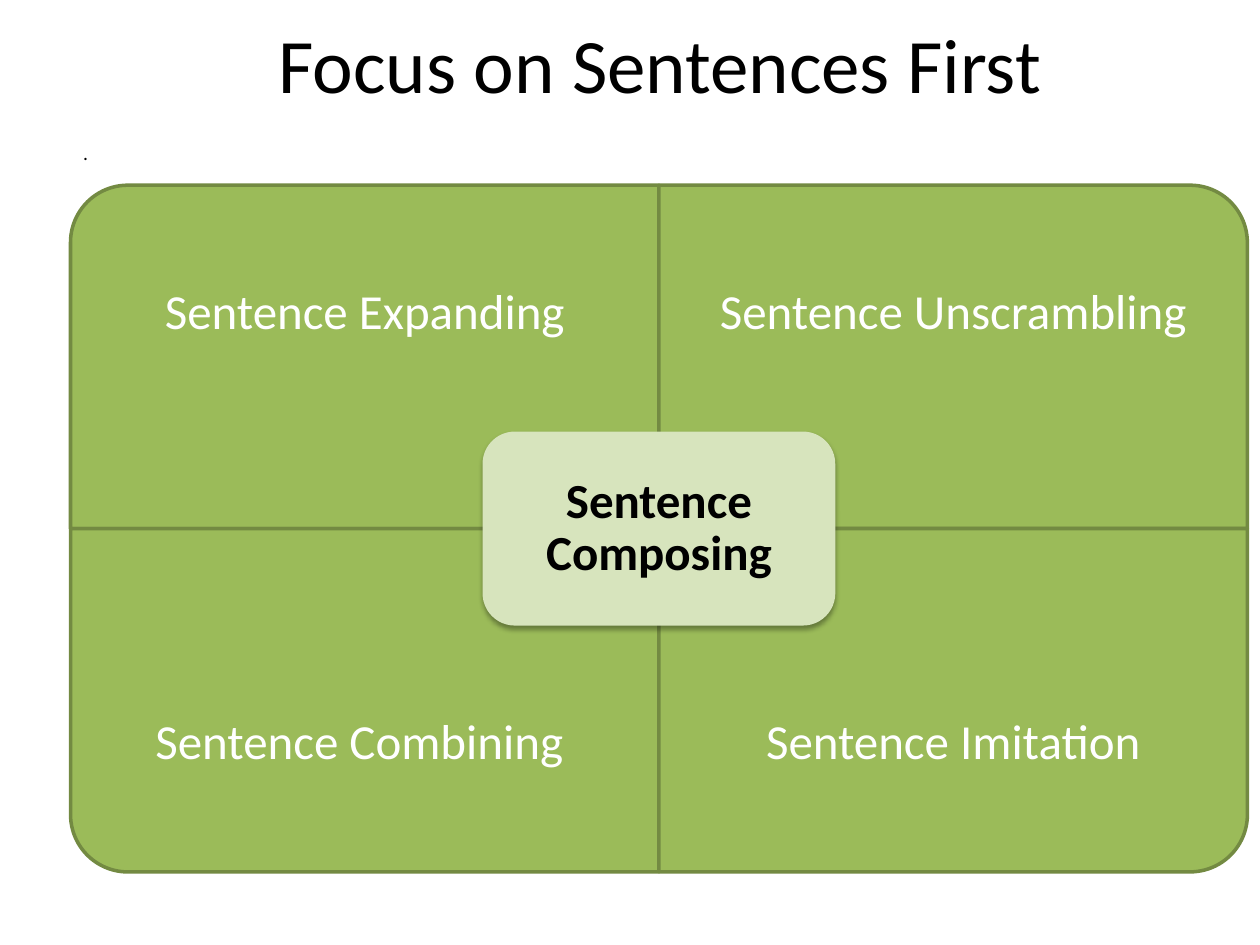
from lxml import etree
from pptx import Presentation
from pptx import util as u
from pptx.dml.color import RGBColor
from pptx.enum import shapes, text
from pptx.oxml import ns

Inches, Pt = u.Inches, u.Pt
GREEN, EDGE, PALE = "9BBB59", "738A42", "D7E4BD"
WHITE, BLACK = "FFFFFF", "000000"


def colour(code):
    return RGBColor.from_string(code)


def place(shape, left, top, width, height):
    shape.left, shape.top = Inches(left), Inches(top)
    shape.width, shape.height = Inches(width), Inches(height)


def format_para(para, size, code, bold=False):
    para.font.name = "Calibri"
    para.font.size = Pt(size)
    para.font.bold = bold
    para.font.color.rgb = colour(code)


def fill_placeholder(shape, words, size, align, box):
    place(shape, *box)
    frame = shape.text_frame
    frame.text = words
    frame.auto_size = text.MSO_AUTO_SIZE.NONE
    frame.vertical_anchor = text.MSO_ANCHOR.TOP
    para = frame.paragraphs[0]
    para.alignment = align
    format_para(para, size, BLACK)
    return para


def remove_bullet(para):
    properties = para._p.get_or_add_pPr()
    properties.set("marL", "0")
    properties.set("indent", "0")
    etree.SubElement(properties, ns.qn("a:buNone"))


def add_label(group, words, box, inset, code, bold=False):
    label = group.shapes.add_textbox(*(Inches(length) for length in box))
    frame = label.text_frame
    frame.word_wrap = True
    frame.vertical_anchor = text.MSO_ANCHOR.MIDDLE
    frame.margin_left = frame.margin_right = Inches(inset)
    frame.margin_top = frame.margin_bottom = Inches(inset)
    frame.text = words
    para = frame.paragraphs[0]
    para.alignment = text.PP_ALIGN.CENTER
    para.line_spacing = 0.9
    para.space_after = Pt(9.8)
    format_para(para, 28, code, bold)


def add_panel(group, kind, box, fill):
    panel = group.shapes.add_shape(kind, *(Inches(length) for length in box))
    panel.shadow.inherit = False
    panel.fill.solid()
    panel.fill.fore_color.rgb = colour(fill)
    return panel


def add_soft_shadow(shape):
    effects = shape._element.spPr.find(ns.qn("a:effectLst"))
    shadow = etree.SubElement(
        effects, ns.qn("a:outerShdw"), blurRad=str(Pt(3.1)), dist=str(Pt(1.8)),
        dir="5400000", algn="t", rotWithShape="0")
    shade = etree.SubElement(shadow, ns.qn("a:srgbClr"), val=BLACK)
    etree.SubElement(shade, ns.qn("a:alpha"), val="35000")


def add_quadrant(group, words, box, rotation, is_lower):
    """Panel turned so its round corner points outward, label in its outer 3/4."""
    left, top, width, height = box
    sides = (height, width) if rotation % 180 else (width, height)
    turned = (left + (width - sides[0]) / 2, top + (height - sides[1]) / 2, *sides)
    panel = add_panel(group, shapes.MSO_SHAPE.ROUND_1_RECTANGLE, turned, GREEN)
    panel.rotation = rotation
    panel.line.color.rgb = colour(EDGE)
    panel.line.width = Pt(2)
    label_top = top + height / 4 if is_lower else top
    add_label(group, words, (left, label_top, width, height * 3 / 4), 0.22, WHITE)


def add_centre(group, words, box):
    left, top, width, height = box
    panel = add_panel(group, shapes.MSO_SHAPE.ROUNDED_RECTANGLE, box, PALE)
    panel.line.fill.background()
    add_soft_shadow(panel)
    pad = 0.08
    inner = (left + pad, top + pad, width - 2 * pad, height - 2 * pad)
    add_label(group, words, inner, 0.12, BLACK, bold=True)


def add_matrix(page, box):
    left, top, width, height = box
    half_width, half_height = width / 2, height / 2
    group = page.shapes.add_group_shape()
    quadrants = [
        ("Sentence Expanding", 0, 0, 270),
        ("Sentence Unscrambling", 1, 0, 0),
        ("Sentence Combining ", 0, 1, 180),
        ("Sentence Imitation", 1, 1, 90),
    ]
    for words, column, row, rotation in quadrants:
        cell = (left + column * half_width, top + row * half_height,
                half_width, half_height)
        add_quadrant(group, words, cell, rotation, row == 1)
    centre_width, centre_height = 2.8, 1.54
    add_centre(group, "Sentence Composing",
               (left + (width - centre_width) / 2, top + (height - centre_height) / 2,
                centre_width, centre_height))


def main():
    deck = Presentation()
    deck.slide_width, deck.slide_height = Inches(10), Inches(7.5)
    page = deck.slides.add_slide(deck.slide_layouts[1])
    fill_placeholder(page.shapes.title, "Focus on Sentences First", 44,
                     text.PP_ALIGN.CENTER, (1.14, 0.08, 8.2, 1.25))
    body = fill_placeholder(page.placeholders[1], ".", 11.2,
                            text.PP_ALIGN.LEFT, (0.56, 1.07, 5.88, 0.26))
    remove_bullet(body)
    add_matrix(page, (0.56, 1.47, 9.34, 5.45))
    deck.save("out.pptx")


if __name__ == "__main__":
    main()
